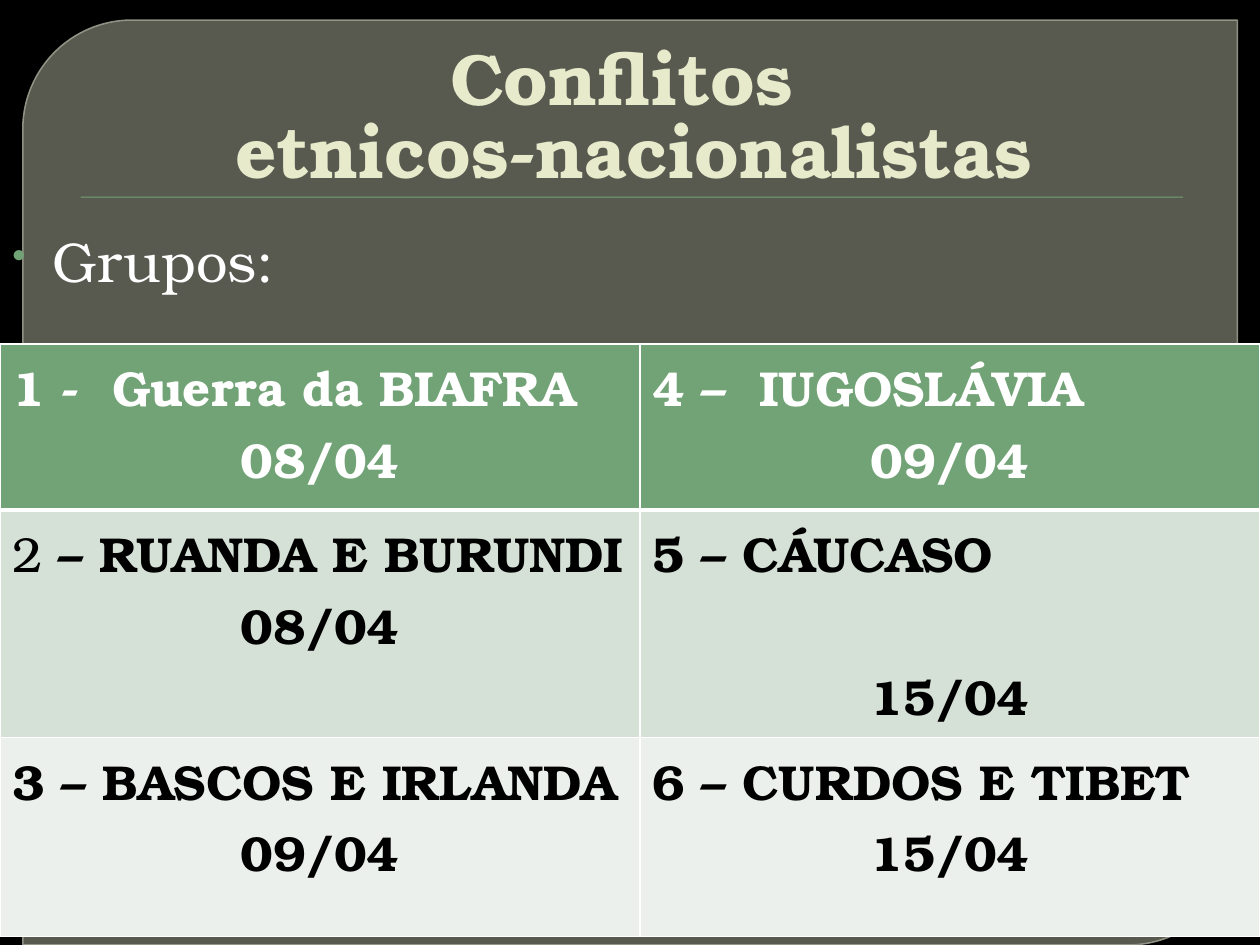
import pptx
import pptx.util
import pptx.dml.color
import pptx.enum.shapes
import pptx.enum.text
import pptx.oxml
import pptx.oxml.ns

Pt = pptx.util.Pt
RGBColor = pptx.dml.color.RGBColor
Shape = pptx.enum.shapes.MSO_SHAPE
Anchor = pptx.enum.text.MSO_ANCHOR
Align = pptx.enum.text.PP_ALIGN

BLACK = RGBColor(0x00, 0x00, 0x00)
WHITE = RGBColor(0xFF, 0xFF, 0xFF)
GREEN = RGBColor(0x72, 0xA3, 0x76)
PALE_GREEN = RGBColor(0xD5, 0xE0, 0xD6)
PALEST_GREEN = RGBColor(0xEB, 0xF0, 0xEC)
OLIVE = RGBColor(0x88, 0x8B, 0x7B)
OLIVE_EDGE = RGBColor(0x9D, 0xA0, 0x90)
CREAM = RGBColor(0xE7, 0xEA, 0xCB)

GROUPS = [
    [("1 -  Guerra da BIAFRA", "08/04"), ("4 –  IUGOSLÁVIA", "09/04")],
    [("2 – RUANDA E BURUNDI", "08/04"), ("5 – CÁUCASO", "15/04")],
    [("3 – BASCOS E IRLANDA", "09/04"), ("6 – CURDOS E TIBET", "15/04")],
]
ROW_STYLES = [(GREEN, WHITE, 3), (PALE_GREEN, BLACK, 1), (PALEST_GREEN, BLACK, 1)]


def xml(tag, attributes="", inner=""):
    namespace = pptx.oxml.ns.nsdecls("a")
    return pptx.oxml.parse_xml(f"<a:{tag} {namespace} {attributes}>{inner}</a:{tag}>")


class SlideBuilder:
    """Draws styled elements on the current slide."""

    typeface = "TeX Gyre Bonum"

    def __init__(self, page):
        self.page = page

    def style(self, para, size, color, bold=False):
        font = para.font
        font.name, font.size, font.bold = self.typeface, Pt(size), bold
        font.color.rgb = color

    def shape(self, kind, left, top, width, height, fill):
        shape = self.page.shapes.add_shape(kind, Pt(left), Pt(top), Pt(width), Pt(height))
        shape.shadow.inherit = False
        shape.fill.solid()
        shape.fill.fore_color.rgb = fill
        shape.line.fill.background()
        return shape

    def panel(self, left, top, width, height):
        panel = self.shape(Shape.ROUND_2_DIAG_RECTANGLE, left, top, width, height, OLIVE)
        panel.adjustments[0], panel.adjustments[1] = 0.118, 0
        panel.line.color.rgb = OLIVE_EDGE
        panel.line.width = Pt(0.87)
        fills = panel._element.spPr.iter(pptx.oxml.ns.qn("a:srgbClr"))
        for color, opacity in zip(list(fills), (65, 88)):
            color.append(xml("alpha", f'val="{opacity * 1000}"'))

    def text(self, words, left, top, width, height, size, color, bold=False):
        box = self.page.shapes.add_textbox(Pt(left), Pt(top), Pt(width), Pt(height))
        frame = box.text_frame
        frame.word_wrap = True
        frame.margin_top = frame.margin_bottom = 0
        para = frame.paragraphs[0]
        para.text = words
        return frame, para, lambda: self.style(para, size, color, bold)

    def title(self, words, left, top, width, height):
        frame, para, finish = self.text(words, left, top, width, height, 41.4, CREAM, True)
        frame.vertical_anchor = Anchor.BOTTOM
        para.alignment = Align.CENTER
        para.line_spacing = 0.83
        para._p.get_or_add_pPr().set("marL", str(Pt(4.32)))
        finish()

    def bullet(self, words, left, top, width, height):
        frame, para, finish = self.text(words, left, top, width, height, 32, WHITE)
        properties = para._p.get_or_add_pPr()
        properties.set("marL", str(Pt(23)))
        properties.set("indent", str(-Pt(23)))
        properties.append(xml("buClr", inner=f'<a:srgbClr val="{GREEN}"/>'))
        properties.append(xml("buSzPct", 'val="70000"'))
        properties.append(xml("buChar", 'char="•"'))
        finish()

    def cell(self, cell, entry, date, fill, color, bottom, gap):
        cell.fill.solid()
        cell.fill.fore_color.rgb = fill
        line = f'<a:solidFill><a:srgbClr val="{WHITE}"/></a:solidFill>'
        for index, side in enumerate("LRTB"):
            width = Pt(bottom if side == "B" else 1)
            cell._tc.tcPr.insert(index, xml(f"ln{side}", f'w="{width}"', line))
        name = cell.text_frame.paragraphs[0]
        if entry.startswith("2 "):
            number = name.add_run()
            number.text, entry = entry[:2], entry[2:]
            number.font.bold = False
        name.add_run().text = entry
        when = cell.text_frame.add_paragraph()
        when.text = date
        when.alignment = Align.CENTER
        when.space_before = Pt(gap)
        for para in (name, when):
            self.style(para, 28, color, True)

    def table(self, left, top, columns, rows):
        frame = self.page.shapes.add_table(
            len(rows), len(columns), Pt(left), Pt(top), Pt(sum(columns)), Pt(sum(rows)))
        table = frame.table
        for column, width in zip(table.columns, columns):
            column.width = Pt(width)
        for index, height in enumerate(rows):
            table.rows[index].height = Pt(height)
            fill, color, bottom = ROW_STYLES[index]
            for cell, (entry, date) in zip(table.rows[index].cells, GROUPS[index]):
                gap = 40.6 if "CÁUCASO" in entry else 0
                self.cell(cell, entry, date, fill, color, bottom, gap)


def main():
    deck = pptx.Presentation()
    deck.slide_width, deck.slide_height = Pt(720), Pt(540)
    page = deck.slides.add_slide(deck.slide_layouts[6])
    page.background.fill.solid()
    page.background.fill.fore_color.rgb = BLACK
    builder = SlideBuilder(page)
    builder.panel(13, 11.5, 694, 528.5)
    builder.shape(Shape.RECTANGLE, 46, 112.3, 630, 0.72, GREEN)
    builder.title("Conflitos \vetnicos-nacionalistas", 36, 20, 648, 90)
    builder.bullet("Grupos:", 0, 129.6, 720, 410.4)
    builder.table(0, 196.5, [365.75, 354.25], [95, 130, 113.75])
    deck.save("out.pptx")


if __name__ == "__main__":
    main()
